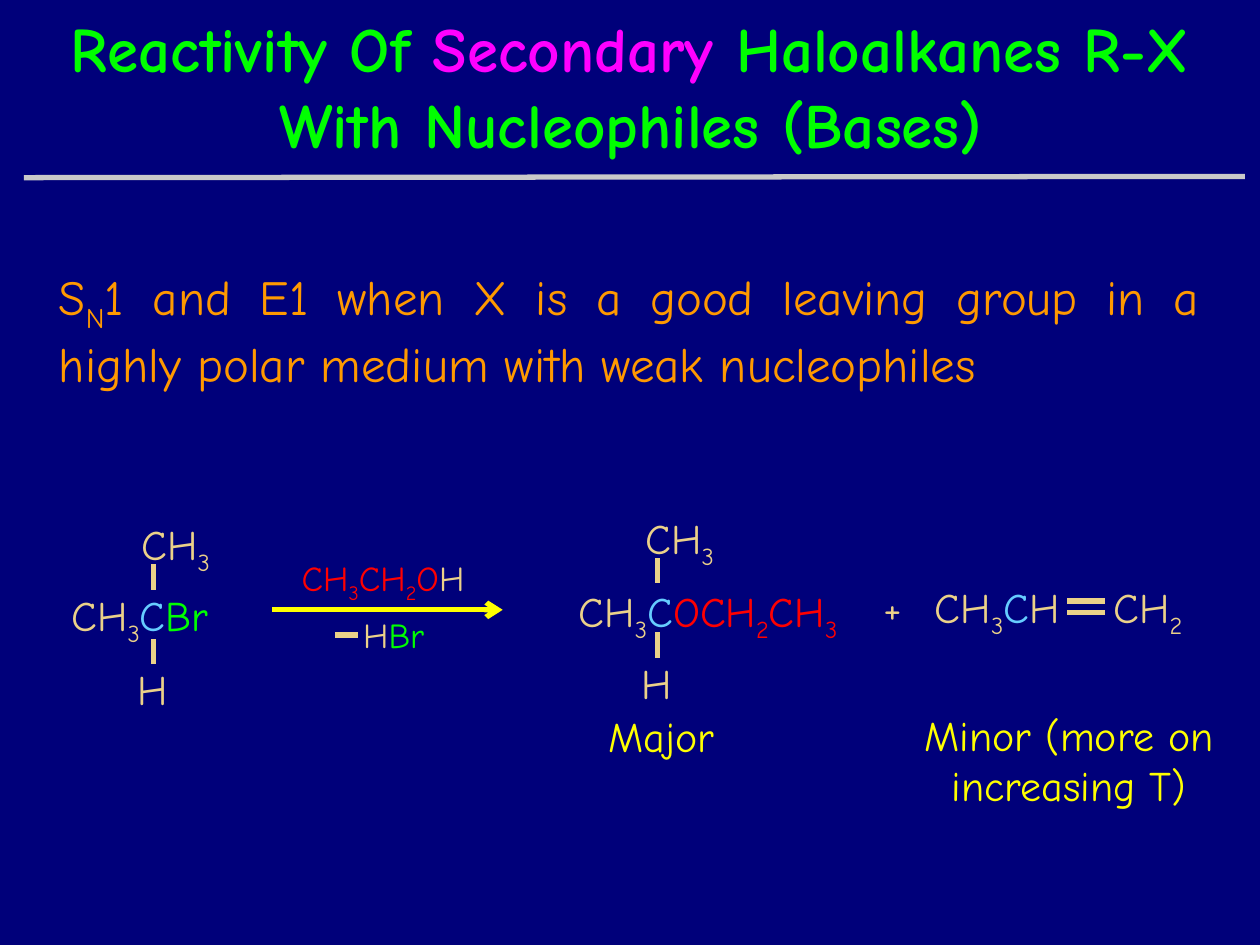
from lxml import etree
from pptx import Presentation
from pptx.dml.color import RGBColor
from pptx.enum.shapes import MSO_CONNECTOR
from pptx.enum.text import MSO_ANCHOR, PP_ALIGN
from pptx.oxml.ns import qn
from pptx.util import Inches, Pt

COLORS = {
    "navy": "00007A", "green": "00FF00", "magenta": "FF00FF",
    "sand": "EBD189", "sky": "66CCFF", "red": "FF0000",
    "yellow": "FFFF00", "orange": "FF9900", "silver": "C9C9C9",
}


class ReactionSlide:
    """Holds the text style and the current slide."""

    font = "Comic Neue"
    line_width = Pt(3)

    def __init__(self, prs):
        self.slide = prs.slides.add_slide(prs.slide_layouts[6])
        fill = self.slide.background.fill
        fill.solid()
        fill.fore_color.rgb = self.color("navy")

    def color(self, name):
        return RGBColor.from_string(COLORS[name])

    def text(self, x, y, w, h, parts, size=24, align=PP_ALIGN.CENTER,
             anchor=MSO_ANCHOR.TOP, bold=False, right=0.1):
        """parts: (text, colour) pairs; the character after "_" is a subscript."""
        sp = self.slide.shapes.add_textbox(Inches(x), Inches(y), Inches(w), Inches(h))
        tf = sp.text_frame
        tf.word_wrap = True
        tf.vertical_anchor = anchor
        tf.margin_right = Inches(right)
        p = tf.paragraphs[0]
        p.alignment = align
        p.font.name, p.font.size, p.font.bold = self.font, Pt(size), bold
        for content, color in parts:
            first, *rest = content.split("_")
            self.run(p, first, color)
            for piece in rest:
                self.run(p, piece[0], color, subscript=True)
                self.run(p, piece[1:], color)

    def run(self, p, content, color, subscript=False):
        if not content:
            return
        r = p.add_run()
        r.text = content
        r.font.color.rgb = self.color(color)
        if subscript:
            r.font._element.set("baseline", "-25000")

    def line(self, x1, y1, x2, y2, color="sand", arrow=False):
        c = self.slide.shapes.add_connector(
            MSO_CONNECTOR.STRAIGHT, Inches(x1), Inches(y1), Inches(x2), Inches(y2))
        c.line.color.rgb = self.color(color)
        c.line.width = self.line_width
        if arrow:
            etree.SubElement(c.line._get_or_add_ln(), qn("a:tailEnd"), type="arrow")
        etree.SubElement(c._element.spPr, qn("a:effectLst"))

    def molecule(self, x, y, w, substituent):
        """Central carbon with CH3 above, H below; x, y is the main row's carbon box."""
        self.text(x + 1.11 - w / 2, y, w, 0.5,
                  [("CH_3", "sand"), ("C", "sky"), substituent])

    def branches(self, x, y):
        """CH3 and H with vertical bonds to the carbon at x, row top at y."""
        self.text(x - 0.23, y - 0.56, 0.81, 0.5, [("CH_3", "sand")])
        self.text(x - 0.23, y + 0.59, 0.4, 0.5, [("H", "sand")])
        for top in (y - 0.15, y + 0.44):
            self.line(x, top, x, top + 0.2)


def main():
    prs = Presentation()
    prs.slide_width, prs.slide_height = Inches(10), Inches(7.5)
    s = ReactionSlide(prs)

    # Title and rule
    s.text(0.38, 0.05, 9.25, 1.25,
           [("Reactivity Of ", "green"), ("Secondary", "magenta"),
            (" Haloalkanes R-X With Nucleophiles (Bases)", "green")],
           size=36, anchor=MSO_ANCHOR.MIDDLE, bold=True)
    s.line(0.19, 1.41, 9.88, 1.4, "silver")

    # Statement
    s.text(0.37, 2.07, 9.63, 1.03,
           [("S_N1 and E1 when X is a good leaving group in a highly "
             "polar medium with weak nucleophiles", "orange")],
           size=28, align=PP_ALIGN.JUSTIFY, right=0.48)

    # Starting material and substitution product
    for x, y, w, carbon_x, substituent in (
            (0.12, 4.63, 1.98, 1.22, ("Br", "green")),
            (4.37, 4.6, 2.5, 5.22, ("OCH_2CH_3", "red"))):
        s.text(x, y, w, 0.5, [("CH_3", "sand"), ("C", "sky"), substituent])
        s.branches(carbon_x, 4.63 if carbon_x < 5 else 4.58)

    # Reaction arrow with reagent and leaving group
    s.line(2.16, 4.84, 3.99, 4.84, "yellow", arrow=True)
    s.text(1.9, 4.37, 2.28, 0.43, [("CH_3CH_2O", "red"), ("H", "sand")], size=20)
    s.text(2.51, 4.82, 1.23, 0.43, [("H", "sand"), ("Br", "green")], size=20)
    s.line(2.66, 5.04, 2.84, 5.04)

    # Elimination product
    s.text(6.86, 4.57, 0.45, 0.5, [("+", "sand")])
    s.text(7.28, 4.57, 1.27, 0.5, [("CH_3", "sand"), ("C", "sky"), ("H", "sand")])
    s.text(8.69, 4.57, 0.84, 0.5, [("CH_2", "sand")])
    for y in (4.77, 4.86):
        s.line(8.47, y, 8.77, y)

    # Product labels
    s.text(4.58, 5.59, 1.34, 0.5, [("Major", "yellow")])
    s.text(6.98, 5.58, 3.01, 0.9, [("Minor (more on increasing T)", "yellow")])

    prs.save("out.pptx")


if __name__ == "__main__":
    main()
